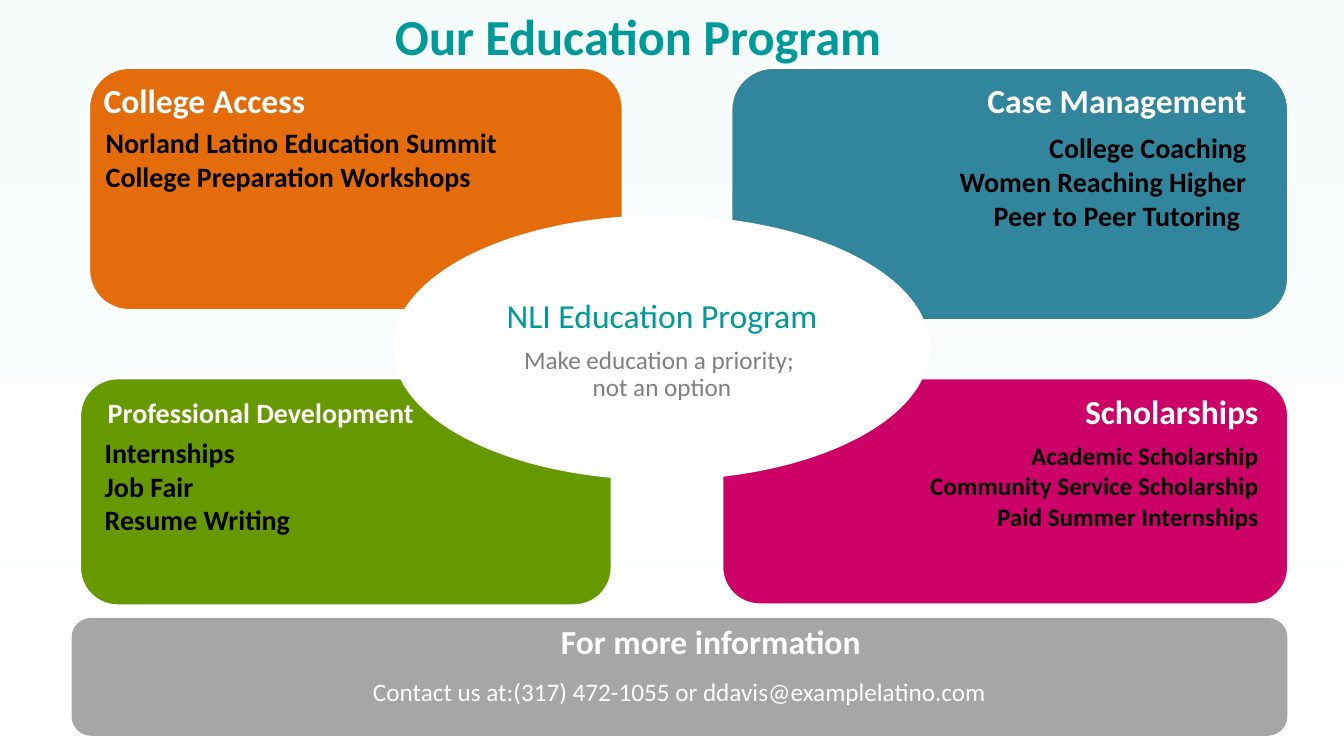
from pptx import Presentation
from pptx.dml.color import RGBColor
from pptx.enum.shapes import MSO_SHAPE
from pptx.enum.text import MSO_ANCHOR, PP_ALIGN
from pptx.util import Inches, Pt

ROUND, OVAL = MSO_SHAPE.ROUNDED_RECTANGLE, MSO_SHAPE.OVAL
LEFT, MID, RIGHT = PP_ALIGN.LEFT, PP_ALIGN.CENTER, PP_ALIGN.RIGHT
TOP, CENTER, BOTTOM = MSO_ANCHOR.TOP, MSO_ANCHOR.MIDDLE, MSO_ANCHOR.BOTTOM
FONT = "Calibri"
WHITE, BLACK, TEAL, GRAY = "FFFFFF", "000000", "009999", "808080"

PANELS = [
    (ROUND, (0.88, 0.67, 5.3, 2.41), "E46C0A", WHITE),
    (ROUND, (7.25, 0.67, 5.53, 2.51), "31859C", WHITE),
    (ROUND, (0.79, 3.75, 5.28, 2.26), "669900", WHITE),
    (ROUND, (7.16, 3.75, 5.62, 2.25), "CC0066", WHITE),
    (OVAL, (3.91, 2.15, 5.3, 2.6), WHITE, WHITE),
    (ROUND, (0.71, 6.13, 12.06, 1.17), "A6A6A6", None),
]

HEADS = [
    ("Our Education Program", (0.33, 0, 12, 0.7), 36, TEAL, MID, CENTER),
    ("College Access", (0.93, 0.74, 5.96, 0.5), 24, WHITE, LEFT, TOP),
    ("Case Management", (8.82, 0.74, 3.64, 0.5), 24, WHITE, RIGHT, TOP),
    ("Professional Development", (0.97, 3.87, 4.11, 0.4), 20, WHITE, LEFT, TOP),
    ("Scholarships", (7.44, 3.83, 5.14, 0.5), 24, WHITE, RIGHT, TOP),
    ("For more information", (4.33, 6.11, 5.44, 0.5), 24, WHITE, MID, TOP),
]

LISTS = [
    (["Norland Latino Education Summit", "College Preparation Workshops"],
     (0.95, 1.2, 5.11, 0.77), 20, LEFT),
    (["College Coaching", "Women Reaching Higher", "Peer to Peer Tutoring "],
     (7.06, 1.25, 5.4, 1.11), 20, RIGHT),
    (["Internships", "Job Fair", "Resume Writing"],
     (0.94, 4.27, 4.89, 1.11), 20, LEFT),
    (["Academic Scholarship", "Community Service Scholarship",
      "Paid Summer Internships"],
     (7.44, 4.32, 5.14, 1.0), 18, RIGHT),
]

CORE = [("NLI Education Program", 24, TEAL),
        ("Make education a priority; \vnot an option", 18, GRAY)]
CORE_BOX = (4.69, 2.56, 3.75, 1.84)
CONTACT = "Contact us at:(317) 472-1055 or ddavis@examplelatino.com"


def color(code):
    return RGBColor.from_string(code)


def inches(box):
    return [Inches(n) for n in box]


def write(frame, lines, bold=True, align=LEFT, anchor=TOP, space=1, after=0):
    frame.word_wrap = True
    frame.vertical_anchor = anchor
    for i, (text, size, code) in enumerate(lines):
        para = frame.add_paragraph() if i else frame.paragraphs[0]
        para.alignment = align
        para.line_spacing = space
        para.space_after = Pt(after)
        for j, part in enumerate(text.split("\v")):
            if j:
                para.add_line_break()
            run = para.add_run()
            run.text = part
            run.font.name = FONT
            run.font.size = Pt(size)
            run.font.bold = bold
            run.font.color.rgb = color(code)


def add_text(slide, box, lines, **style):
    write(slide.shapes.add_textbox(*inches(box)).text_frame, lines, **style)


def add_panel(slide, kind, box, fill, line):
    panel = slide.shapes.add_shape(kind, *inches(box))
    panel.shadow.inherit = False
    panel.fill.solid()
    panel.fill.fore_color.rgb = color(fill)
    if line:
        panel.line.color.rgb = color(line)
        panel.line.width = Pt(2)
    else:
        panel.line.fill.background()
    return panel


def main():
    deck = Presentation()
    deck.slide_width, deck.slide_height = Inches(13.33), Inches(7.5)
    slide = deck.slides.add_slide(deck.slide_layouts[6])

    back = slide.background.fill
    back.gradient()
    back.gradient_angle = 270
    for stop, code in zip(back.gradient_stops, ("F6FBFC", WHITE)):
        stop.color.rgb = color(code)

    panels = [add_panel(slide, *spot) for spot in PANELS]
    foot = panels[-1].text_frame
    foot.margin_bottom = Inches(0.23)
    write(foot, [(CONTACT, 18, WHITE)], bold=False, align=MID, anchor=BOTTOM)

    add_text(slide, CORE_BOX, CORE, bold=False, align=MID, anchor=CENTER,
             space=0.9, after=8)
    for text, box, size, code, align, anchor in HEADS:
        add_text(slide, box, [(text, size, code)], align=align, anchor=anchor)
    for items, box, size, align in LISTS:
        add_text(slide, box, [(item, size, BLACK) for item in items],
                 align=align)

    deck.save("out.pptx")


if __name__ == "__main__":
    main()
